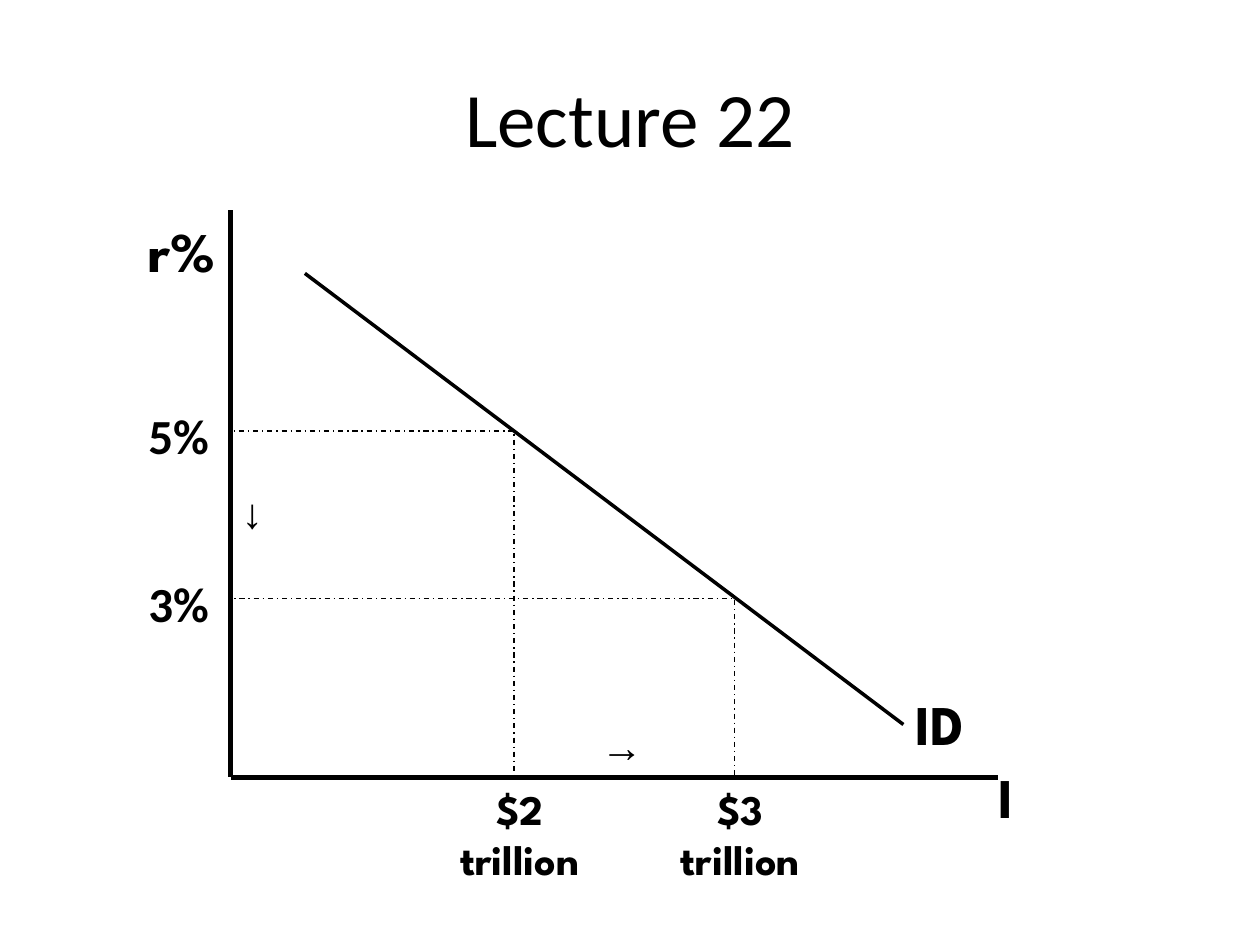
from dataclasses import dataclass
from lxml.etree import SubElement
from pptx import Presentation
from pptx.dml.color import RGBColor
from pptx.enum.dml import MSO_LINE_DASH_STYLE as Dash
from pptx.enum.shapes import MSO_CONNECTOR as Connector, MSO_SHAPE as Shape
from pptx.enum.text import MSO_ANCHOR as Anchor, MSO_AUTO_SIZE as AutoSize, PP_ALIGN as Align
from pptx.oxml.ns import qn
from pptx.util import Inches, Pt

LEFT, TOP, RIGHT, BASE = 1.83, 1.67, 7.92, 6.17


def color(value):
    return RGBColor.from_string(value)


def inches(*values):
    return [Inches(value) for value in values]


def apply(target, values):
    for name, value in values.items():
        setattr(target, name, value)


@dataclass
class Diagram:
    page: object
    ink: str = "000000"
    display: str = "League Spartan"
    body: str = "Calibri"
    symbol: str = "Times New Roman"

    def add_text(self, frame, text, font, size, bold=False, align=Align.LEFT):
        para = frame.paragraphs[0]
        para.alignment = align
        span = para.add_run()
        span.text = text
        apply(span.font, {"name": font, "size": Pt(size), "bold": bold})
        span.font.color.rgb = color(self.ink)

    def title(self, text):
        box = self.page.shapes.title
        apply(box, dict(zip(("left", "top", "width", "height"), inches(0.5, 0.3, 9, 1.25))))
        box.text_frame.vertical_anchor = Anchor.MIDDLE
        self.add_text(box.text_frame, text, self.body, 44, align=Align.CENTER)

    def label(self, text, place, font, size, bold=True, align=Align.LEFT, wrap=True, turn=0):
        box = self.page.shapes.add_textbox(*inches(*place))
        box.rotation = turn
        apply(box.text_frame, {"word_wrap": wrap, "auto_size": AutoSize.SHAPE_TO_FIT_TEXT})
        self.add_text(box.text_frame, text, font, size, bold, align)

    def line(self, start, end, width):
        line = self.page.shapes.add_connector(Connector.STRAIGHT, *inches(*start, *end))
        line.line.color.rgb = color(self.ink)
        line.line.width = Pt(width)
        SubElement(line._element.spPr, qn("a:effectLst"))

    def guide(self, x, y):
        box = self.page.shapes.add_shape(Shape.RECTANGLE, *inches(LEFT, y, x - LEFT, BASE - y))
        box.shadow.inherit = False
        box.fill.background()
        box.line.color.rgb = color(self.ink)
        apply(box.line, {"width": Pt(0.75), "dash_style": Dash.DASH_DOT})


def main():
    deck = Presentation()
    apply(deck, {"slide_width": Inches(10), "slide_height": Inches(7.5)})
    diagram = Diagram(deck.slides.add_slide(deck.slide_layouts[5]))
    diagram.title("Lecture 22")

    for start, end, width in (
        ((LEFT, TOP), (LEFT, BASE), 2.5),
        ((LEFT, BASE), (RIGHT, BASE), 2.5),
        ((2.42, 2.17), (7.17, 5.75), 2),
    ):
        diagram.line(start, end, width)

    for text, left, top, width in (
        ("r%", 1.08, TOP, 0.75),
        ("I", 7.83, 6, 0.92),
        ("ID", 7.17, 5.42, 1),
    ):
        diagram.label(text, (left, top, width, 0.63), diagram.display, 32)

    for rate, amount, x, y in (("5%", "$2 trillion", 4.08, 3.42), ("3%", "$3 trillion", 5.83, 4.75)):
        diagram.guide(x, y)
        diagram.label(rate, (1.08, y - 0.25, 0.75, 0.57), diagram.body, 28, wrap=False)
        diagram.label(amount, (x - 0.58, BASE, 1.25, 0.9), diagram.display, 24, align=Align.CENTER)

    diagram.label("→", (1.79, 3.88, 0.58, 0.5), diagram.symbol, 24, bold=False, turn=90)
    diagram.label("→", (4.67, 5.67, 0.53, 0.5), diagram.symbol, 24, bold=False, wrap=False)
    deck.save("out.pptx")


if __name__ == "__main__":
    main()
